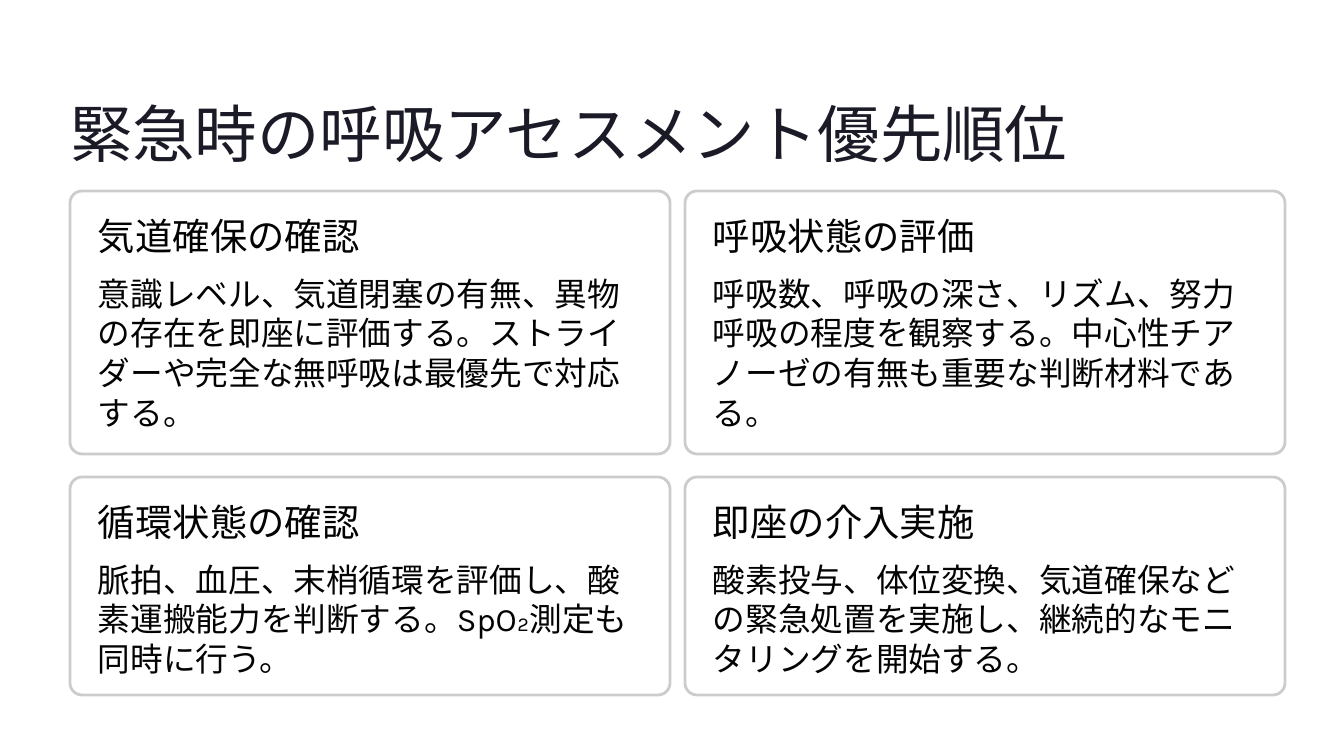
import lxml.etree
import pptx
import pptx.dml.color
import pptx.enum.lang
import pptx.enum.shapes
import pptx.enum.text
import pptx.oxml.ns
import pptx.util

TITLE = "緊急時の呼吸アセスメント優先順位"
CARD_ROWS = [
    {
        "top": 191,
        "height": 263,
        "body_height": 138,
        "cards": [
            ("気道確保の確認", "意識レベル、気道閉塞の有無、異物の存在を即座に評価する。ストライダーや完全な無呼吸は最優先で対応する。"),
            ("呼吸状態の評価", "呼吸数、呼吸の深さ、リズム、努力呼吸の程度を観察する。中心性チアノーゼの有無も重要な判断材料である。"),
        ],
    },
    {
        "top": 477,
        "height": 218,
        "body_height": 92,
        "cards": [
            ("循環状態の確認", "脈拍、血圧、末梢循環を評価し、酸素運搬能力を判断する。SpO₂測定も同時に行う。"),
            ("即座の介入実施", "酸素投与、体位変換、気道確保などの緊急処置を実施し、継続的なモニタリングを開始する。"),
        ],
    },
]
COLORS = {"title": "1B1B27", "text": "030303", "card": "FFFFFF", "border": "CCCCCC"}
HEADING_FONT, BODY_FONT = "Inter", "Karla"
PX = 914400 // 84
LEFT, CARD_WIDTH, COLUMN_GAP = 70, 600, 15
INSET, BODY_OFFSET, RADIUS = 28, 82, 12


def px(*lengths):
    return [length * PX for length in lengths]


def color(name):
    return pptx.dml.color.RGBColor.from_string(COLORS[name])


def write(box, text, *, font, size, leading, ink="text", wrap=False):
    frame = box.text_frame
    frame.margin_left = frame.margin_top = frame.margin_right = frame.margin_bottom = 0
    frame.auto_size = pptx.enum.text.MSO_AUTO_SIZE.NONE
    frame.vertical_anchor = pptx.enum.text.MSO_ANCHOR.TOP
    frame.word_wrap = wrap
    para = frame.paragraphs[0]
    para.alignment = pptx.enum.text.PP_ALIGN.LEFT
    para.line_spacing = pptx.util.Pt(leading)
    span = para.add_run()
    span.text = text
    span.font.size = pptx.util.Pt(size)
    span.font.color.rgb = color(ink)
    span.font.name = font
    span.font.language_id = pptx.enum.lang.MSO_LANGUAGE_ID.JAPANESE
    east_asian = lxml.etree.SubElement(span.font._element, pptx.oxml.ns.qn("a:ea"))
    east_asian.set("typeface", font)


def add_card(page, left, row, heading, body):
    top, height = row["top"], row["height"]
    card = page.shapes.add_shape(
        pptx.enum.shapes.MSO_SHAPE.ROUNDED_RECTANGLE, *px(left, top, CARD_WIDTH, height)
    )
    card.adjustments[0] = RADIUS / height
    card.shadow.inherit = False
    card.fill.solid()
    card.fill.fore_color.rgb = color("card")
    fill = card._element.spPr.find(pptx.oxml.ns.qn("a:solidFill"))
    lxml.etree.SubElement(fill[0], pptx.oxml.ns.qn("a:alpha")).set("val", "95000")
    card.line.color.rgb = color("border")
    card.line.width = pptx.util.Pt(2.4)

    heading_box = page.shapes.add_textbox(*px(left + INSET, top + INSET, 319, 45))
    write(heading_box, heading, font=HEADING_FONT, size=32, leading=33.5)
    body_box = page.shapes.add_textbox(
        *px(left + INSET, top + BODY_OFFSET, CARD_WIDTH - 2 * INSET, row["body_height"])
    )
    write(body_box, body, font=BODY_FONT, size=28, leading=34, wrap=True)


def main():
    deck = pptx.Presentation()
    deck.slide_width, deck.slide_height = px(16 * 84, 9 * 84)
    page = deck.slides.add_slide(deck.slide_layouts[5])
    title = page.shapes.title
    title.left, title.top, title.width, title.height = px(LEFT, 92, 1000, 78)
    write(title, TITLE, font=HEADING_FONT, size=53.5, leading=67, ink="title")
    for row in CARD_ROWS:
        for column, (heading, body) in enumerate(row["cards"]):
            add_card(page, LEFT + column * (CARD_WIDTH + COLUMN_GAP), row, heading, body)
    deck.save("out.pptx")


if __name__ == "__main__":
    main()
